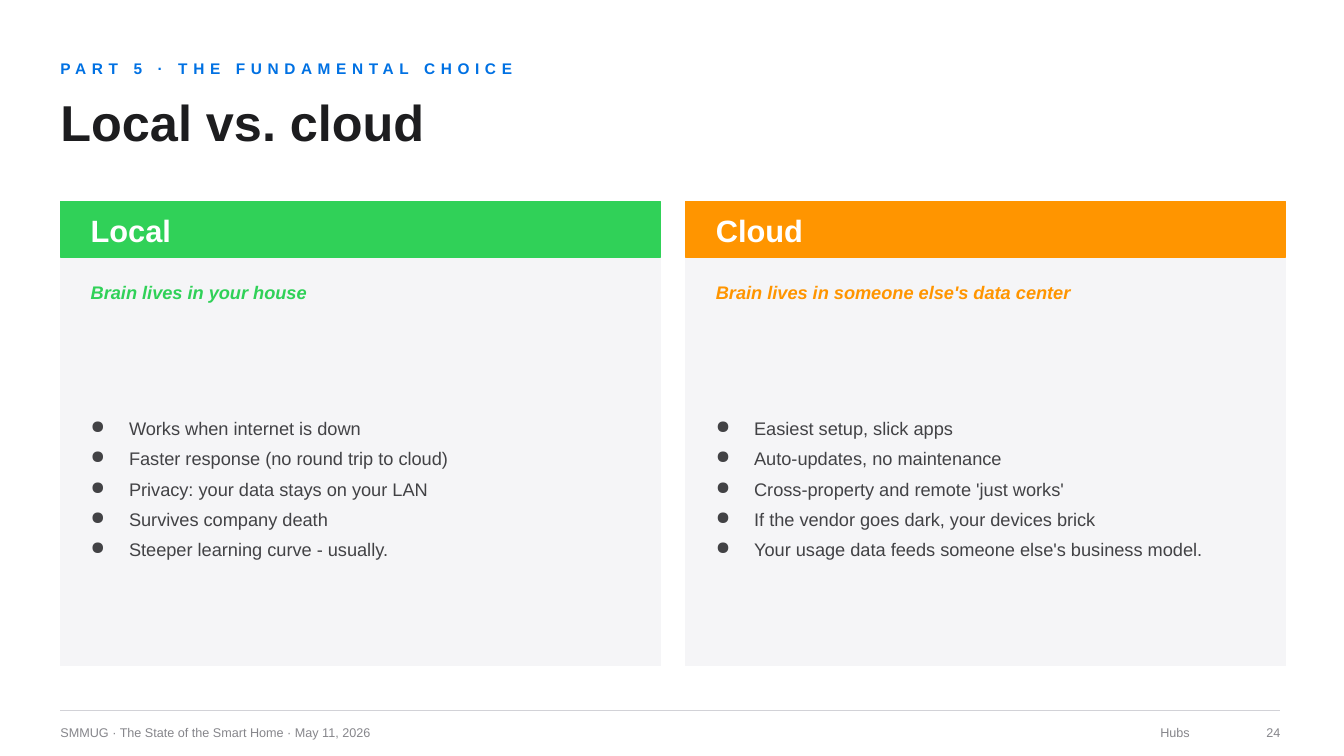
from dataclasses import dataclass

from lxml import etree
from pptx import Presentation
from pptx.dml.color import RGBColor
from pptx.enum.shapes import MSO_CONNECTOR, MSO_SHAPE
from pptx.enum.text import MSO_ANCHOR, PP_ALIGN
from pptx.oxml.ns import qn
from pptx.util import Inches, Pt

RECTANGLE = MSO_SHAPE.RECTANGLE
STRAIGHT = MSO_CONNECTOR.STRAIGHT
TOP, MIDDLE = MSO_ANCHOR.TOP, MSO_ANCHOR.MIDDLE
LEFT, RIGHT = PP_ALIGN.LEFT, PP_ALIGN.RIGHT


@dataclass(frozen=True)
class Theme:
    font: str = "Arial"
    blue: str = "0071E3"
    ink: str = "1D1D1F"
    body: str = "424245"
    muted: str = "86868B"
    rule: str = "D2D2D7"
    panel: str = "F5F5F7"
    white: str = "FFFFFF"
    green: str = "30D158"
    orange: str = "FF9500"
    title_size: int = 36
    header_size: int = 22
    body_size: int = 13
    kicker_size: int = 11
    footer_size: int = 9


THEME = Theme()

KICKER = "PART 5 · THE FUNDAMENTAL CHOICE"
TITLE = "Local vs. cloud"
CARDS = [
    ("Local", THEME.green, "Brain lives in your house", [
        "Works when internet is down",
        "Faster response (no round trip to cloud)",
        "Privacy: your data stays on your LAN",
        "Survives company death",
        "Steeper learning curve - usually.",
    ]),
    ("Cloud", THEME.orange, "Brain lives in someone else's data center", [
        "Easiest setup, slick apps",
        "Auto-updates, no maintenance",
        "Cross-property and remote 'just works'",
        "If the vendor goes dark, your devices brick",
        "Your usage data feeds someone else's business model.",
    ]),
]
FOOTER = [  # text, left, width, alignment
    ("SMMUG · The State of the Smart Home · May 11, 2026", 0.6, 8, LEFT),
    ("Hubs", 8.6, 3.2, RIGHT),
    ("24", 12, 0.7, RIGHT),
]

SLIDE_WIDTH, SLIDE_HEIGHT = 13.33, 7.5
MARGIN = 0.6
CONTENT_WIDTH = 12
CARD_TOP, CARD_WIDTH, CARD_HEIGHT, CARD_GAP = 2, 5.95, 4.6, 0.25
HEADER_HEIGHT = 0.55
CARD_PADDING, CARD_TEXT_WIDTH = 0.3, 5.5
BULLET_INDENT = 0.38
RULE_TOP, RULE_RIGHT = 7.05, 12.7
FOOTER_TOP, FOOTER_HEIGHT = 7.12, 0.3


def add_text(slide, lines, left, top, width, height, size, color,
             bold=False, italic=False, anchor=MIDDLE, align=LEFT,
             bulleted=False, spacing=None):
    box = slide.shapes.add_textbox(*map(Inches, (left, top, width, height)))
    frame = box.text_frame
    frame.word_wrap = True
    frame.vertical_anchor = anchor
    frame.margin_left = frame.margin_right = 0
    frame.margin_top = frame.margin_bottom = 0
    frame.text = "\n".join(lines)
    for paragraph in frame.paragraphs:
        paragraph.alignment = align
        if bulleted:
            add_bullet(paragraph)
        font = paragraph.runs[0].font
        font.name, font.size = THEME.font, Pt(size)
        font.bold, font.italic = bold, italic
        font.color.rgb = RGBColor.from_string(color)
        if spacing:
            paragraph.runs[0]._r.get_or_add_rPr().set("spc", str(spacing * 100))


def add_bullet(paragraph):
    paragraph.space_after = Pt(6)
    properties = paragraph._p.get_or_add_pPr()
    properties.set("marL", str(Inches(BULLET_INDENT)))
    properties.set("indent", str(-Inches(BULLET_INDENT)))
    etree.SubElement(properties, qn("a:buChar")).set("char", "●")


def add_block(slide, left, top, width, height, color):
    block = slide.shapes.add_shape(
        RECTANGLE, *map(Inches, (left, top, width, height)))
    block.shadow.inherit = False
    block.fill.solid()
    block.fill.fore_color.rgb = RGBColor.from_string(color)
    block.line.color.rgb = RGBColor.from_string(color)
    block.line.width = Pt(1)


def add_card(slide, left, name, accent, tagline, points):
    add_block(slide, left, CARD_TOP, CARD_WIDTH, CARD_HEIGHT, THEME.panel)
    add_block(slide, left, CARD_TOP, CARD_WIDTH, HEADER_HEIGHT, accent)
    text_left = left + CARD_PADDING
    add_text(slide, [name], text_left, CARD_TOP + 0.03, CARD_TEXT_WIDTH, 0.5,
             THEME.header_size, THEME.white, bold=True)
    add_text(slide, [tagline], text_left, CARD_TOP + 0.7, CARD_TEXT_WIDTH, 0.4,
             THEME.body_size, accent, bold=True, italic=True)
    add_text(slide, points, text_left, CARD_TOP + 1.2, CARD_TEXT_WIDTH, 3.3,
             THEME.body_size, THEME.body, bulleted=True)


def add_footer(slide):
    rule = slide.shapes.add_connector(
        STRAIGHT, *map(Inches, (MARGIN, RULE_TOP, RULE_RIGHT, RULE_TOP)))
    rule.line.color.rgb = RGBColor.from_string(THEME.rule)
    rule.line.width = Pt(0.75)
    etree.SubElement(rule._element.spPr, qn("a:effectLst"))
    for text, left, width, align in FOOTER:
        add_text(slide, [text], left, FOOTER_TOP, width, FOOTER_HEIGHT,
                 THEME.footer_size, THEME.muted, align=align)


def main():
    presentation = Presentation()
    presentation.slide_width = Inches(SLIDE_WIDTH)
    presentation.slide_height = Inches(SLIDE_HEIGHT)
    slide = presentation.slides.add_slide(presentation.slide_layouts[6])
    slide.background.fill.solid()
    slide.background.fill.fore_color.rgb = RGBColor.from_string(THEME.white)

    add_text(slide, [KICKER], MARGIN, 0.5, CONTENT_WIDTH, 0.35,
             THEME.kicker_size, THEME.blue, bold=True, spacing=4)
    add_text(slide, [TITLE], MARGIN, 0.9, CONTENT_WIDTH, 1,
             THEME.title_size, THEME.ink, bold=True, anchor=TOP)
    for column, card in enumerate(CARDS):
        add_card(slide, MARGIN + column * (CARD_WIDTH + CARD_GAP), *card)
    add_footer(slide)
    presentation.save("out.pptx")


if __name__ == "__main__":
    main()
